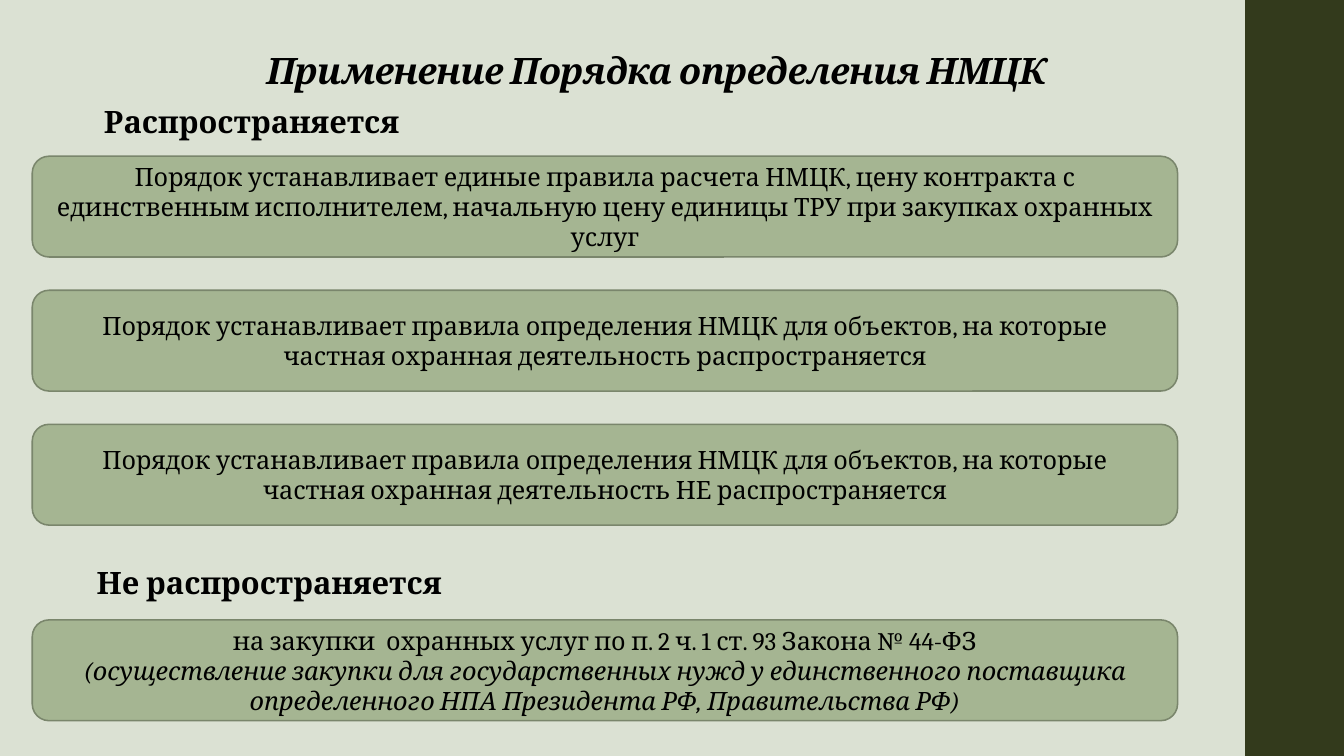
from pptx import Presentation
from pptx.dml.color import RGBColor
from pptx.enum.shapes import MSO_SHAPE as Shape
from pptx.enum.text import MSO_ANCHOR as Anchor, PP_ALIGN as Align
from pptx.util import Inches, Pt

# Content: a paragraph is (text, italic)
TITLE = "Применение Порядка определения НМЦК"
HEADINGS = [  # text, (left, top, width, height)
    ("Распространяется", (0.32, 0.97, 4.35, 0.47)),
    ("Не распространяется", (0.26, 5.54, 4.82, 0.47)),
]
APPLIES = [
    [("Порядок устанавливает единые правила расчета НМЦК, цену контракта с "
      "единственным исполнителем, начальную цену единицы ТРУ при закупках "
      "охранных услуг", False)],
    [("Порядок устанавливает правила определения НМЦК для объектов, на которые "
      "частная охранная деятельность распространяется", False)],
    [("Порядок устанавливает правила определения НМЦК для объектов, на которые "
      "частная охранная деятельность НЕ распространяется", False)],
]
EXEMPT = [
    ("на закупки  охранных услуг по п. 2 ч. 1 ст. 93 Закона № 44-ФЗ", False),
    ("(осуществление закупки для государственных нужд у единственного поставщика "
     "определенного НПА Президента РФ, Правительства РФ)", True),
]

THEME = {
    "font": "Cambria",
    "background": RGBColor(0xDB, 0xE1, 0xD3),
    "band": RGBColor(0x33, 0x3A, 0x1C),
    "card": RGBColor(0xA5, 0xB5, 0x92),
    "outline": RGBColor(0x7A, 0x86, 0x6C),
    "text": RGBColor(0, 0, 0),
    "title_size": Pt(26),
    "heading_size": Pt(22),
    "body_size": Pt(18),
}

# Layout, in inches
TITLE_AREA = (1.39, 0.29, 10.24, 0.68)
BAND_AREA = (12.35, 0, 1, 7.5)
CARD_LEFT, CARD_WIDTH, CARD_HEIGHT, CARD_INSET = 0.32, 11.36, 1, 0.14
FIRST_TOP, CARD_STEP, EXEMPT_TOP = 1.55, 1.33, 6.15


def add_span(para, text, **formats):
    span = para.add_run()
    span.text = text
    span.font.color.rgb = THEME["text"]
    for name, value in {"name": THEME["font"], **formats}.items():
        setattr(span.font, name, value)
    return span


def fill_label(box, text, anchor, **formats):
    box.text_frame.word_wrap = True
    box.text_frame.vertical_anchor = anchor
    para = box.text_frame.paragraphs[0]
    para.alignment = Align.CENTER
    return para, add_span(para, text, bold=True, **formats)


def add_block(page, kind, area, color):
    block = page.shapes.add_shape(kind, *map(Inches, area))
    block.shadow.inherit = False
    block.fill.solid()
    block.fill.fore_color.rgb = color
    block.line.fill.background()
    return block


def add_card(page, top, paragraphs):
    area = (CARD_LEFT, top, CARD_WIDTH, CARD_HEIGHT)
    card = add_block(page, Shape.ROUNDED_RECTANGLE, area, THEME["card"])
    card.line.color.rgb = THEME["outline"]
    card.line.width = Pt(1.1)
    frame = card.text_frame
    frame.word_wrap = True
    frame.vertical_anchor = Anchor.MIDDLE
    frame.margin_left = frame.margin_right = Inches(CARD_INSET)
    for index, (text, italic) in enumerate(paragraphs):
        para = frame.add_paragraph() if index else frame.paragraphs[0]
        para.alignment = Align.CENTER
        add_span(para, text, size=THEME["body_size"], italic=italic)


def main():
    deck = Presentation()
    deck.slide_width, deck.slide_height = Inches(13.33), Inches(7.5)
    page = deck.slides.add_slide(deck.slide_layouts[6])
    page.background.fill.solid()
    page.background.fill.fore_color.rgb = THEME["background"]

    # Side band
    add_block(page, Shape.RECTANGLE, BAND_AREA, THEME["band"])

    # Title, slightly condensed
    title = add_block(page, Shape.RECTANGLE, TITLE_AREA, THEME["background"])
    para, span = fill_label(title, TITLE, Anchor.BOTTOM,
                            size=THEME["title_size"], italic=True)
    para.line_spacing = 0.9
    span.font._element.set("spc", "-50")

    # Section headings
    for text, area in HEADINGS:
        heading = page.shapes.add_textbox(*map(Inches, area))
        fill_label(heading, text, Anchor.TOP, size=THEME["heading_size"])

    # Cards
    for index, paragraphs in enumerate(APPLIES):
        add_card(page, FIRST_TOP + index * CARD_STEP, paragraphs)
    add_card(page, EXEMPT_TOP, EXEMPT)

    deck.save("out.pptx")


if __name__ == "__main__":
    main()
